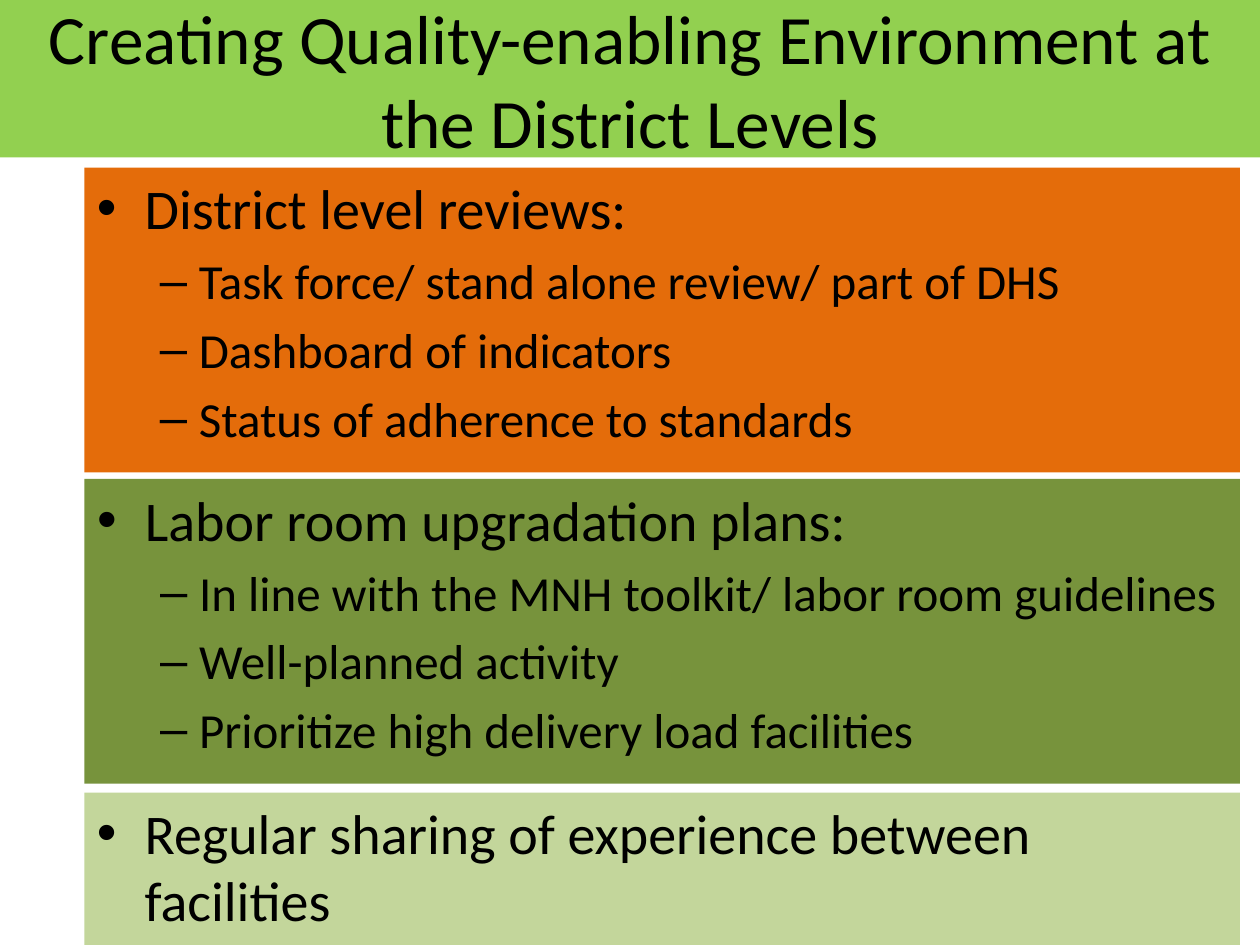
from lxml import etree
from pptx import Presentation
from pptx.dml.color import RGBColor
from pptx.enum.text import MSO_ANCHOR, MSO_AUTO_SIZE, PP_ALIGN
from pptx.oxml.ns import qn
from pptx.util import Inches, Pt

TOP, MIDDLE = MSO_ANCHOR.TOP, MSO_ANCHOR.MIDDLE
NO_FIT = MSO_AUTO_SIZE.NONE
LEFT, CENTER = PP_ALIGN.LEFT, PP_ALIGN.CENTER

COLORS = {
    "text": "000000",
    "title": "92D050",
    "review": "E46C0A",
    "labor": "77933C",
    "share": "C3D69B",
}
FONT = "Calibri"
LEVELS = [
    {"size": 32, "bullet": "•", "left": 0.38, "hang": 0.38},
    {"size": 28, "bullet": "–", "left": 0.81, "hang": 0.31},
]

TITLE = "Creating Quality-enabling Environment at the District Levels"
REVIEW = [
    (0, "District level reviews:"),
    (1, "Task force/ stand alone review/ part of DHS"),
    (1, "Dashboard of indicators"),
    (1, "Status of adherence to standards"),
]
LABOR = [
    (0, "Labor room upgradation plans:"),
    (1, "In line with the MNH toolkit/ labor room guidelines"),
    (1, "Well-planned activity"),
    (1, "Prioritize high delivery load facilities"),
]
SHARE = [(0, "Regular sharing of experience between facilities")]


def color(name):
    return RGBColor.from_string(COLORS[name])


def set_bullet(para, bullet, left, hang):
    props = para._p.get_or_add_pPr()
    props.set("marL", str(Inches(left)))
    props.set("indent", str(-Inches(hang)))
    before = etree.SubElement(props, qn("a:spcBef"))
    etree.SubElement(before, qn("a:spcPct"), val="20000")
    etree.SubElement(props, qn("a:buFont"), typeface="Arial")
    etree.SubElement(props, qn("a:buChar"), char=bullet)


def write(para, text, size, align=LEFT, level=0):
    para.level = level
    para.alignment = align
    run = para.add_run()
    run.text = text
    run.font.name = FONT
    run.font.size = Pt(size)
    run.font.color.rgb = color("text")


def set_panel(shape, box, fill, anchor):
    shape.left, shape.top, shape.width, shape.height = map(Inches, box)
    shape.fill.solid()
    shape.fill.fore_color.rgb = color(fill)
    frame = shape.text_frame
    frame.auto_size = NO_FIT
    frame.word_wrap = True
    frame.vertical_anchor = anchor
    return frame


def put_title(shape, box):
    frame = set_panel(shape, box, "title", MIDDLE)
    write(frame.paragraphs[0], TITLE, size=39.6, align=CENTER)


def put_list(shape, box, fill, items):
    frame = set_panel(shape, box, fill, TOP)
    for i, (level, text) in enumerate(items):
        para = frame.add_paragraph() if i else frame.paragraphs[0]
        style = LEVELS[level]
        write(para, text, size=style["size"], level=level)
        set_bullet(para, style["bullet"], style["left"], style["hang"])


def main():
    deck = Presentation()
    deck.slide_width, deck.slide_height = Inches(10), Inches(7.5)
    slide = deck.slides.add_slide(deck.slide_layouts[1])
    title, body = slide.placeholders
    put_title(title, (0, 0, 10, 1.25))
    panels = [
        (None, 1.33, 2.42, "review", REVIEW),
        (body, 3.8, 2.42, "labor", LABOR),
        (None, 6.29, 1.21, "share", SHARE),
    ]
    for shape, top, height, fill, items in panels:
        if shape is None:
            shape = slide.shapes.add_textbox(0, 0, 0, 0)
        put_list(shape, (0.67, top, 9.17, height), fill, items)
    deck.save("out.pptx")


if __name__ == "__main__":
    main()
